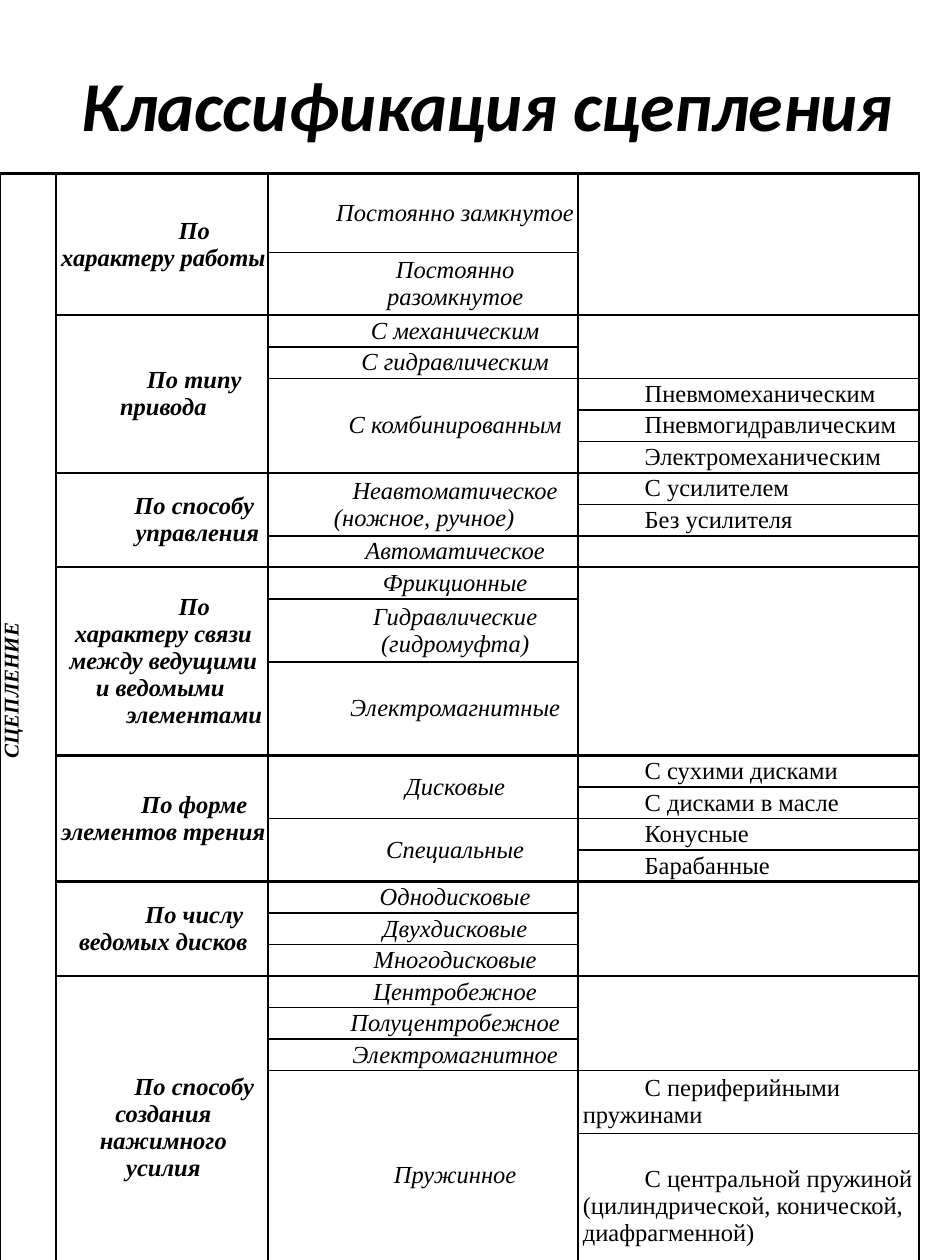
from lxml import etree
from pptx import Presentation
from pptx.dml.color import RGBColor
from pptx.enum import text
from pptx.oxml.ns import qn
from pptx.util import Pt

BLACK = RGBColor(0, 0, 0)
SERIF = "Times New Roman"
THICK, THIN = 1.5, 1
LINE = 18  # height of a one-line row
COLUMNS = [32.1, 121.2, 177, 194.7]
ROWS = [45, 36] + [LINE] * 9 + [36, 53.5] + [LINE] * 10 + [36, 82]

# Feature, its kinds and their subtypes; each entry is (text, rows spanned).
GROUPS = [
    ("По характеру работы",
     [("Постоянно замкнутое", 1), ("Постоянно\nразомкнутое", 1)],
     [("", 2)]),
    ("По типу привода",
     [("С механическим", 1), ("С гидравлическим", 1), ("С комбинированным", 3)],
     [("", 2), ("Пневмомеханическим", 1), ("Пневмогидравлическим", 1),
      ("Электромеханическим", 1)]),
    ("По способу\n управления",
     [("Неавтоматическое (ножное, ручное)", 2), ("Автоматическое", 1)],
     [("С усилителем", 1), ("Без усилителя", 1), ("", 1)]),
    ("По характеру связи между ведущими и ведомыми \nэлементами",
     [("Фрикционные", 1), ("Гидравлические\n(гидромуфта)", 1),
      ("Электромагнитные", 1)],
     [("", 3)]),
    ("По форме элементов трения",
     [("Дисковые", 2), ("Специальные", 2)],
     [("С сухими дисками", 1), ("С дисками в масле", 1),
      ("Конусные", 1), ("Барабанные", 1)]),
    ("По числу ведомых дисков",
     [("Однодисковые", 1), ("Двухдисковые", 1), ("Многодисковые", 1)],
     [("", 3)]),
    ("По способу создания нажимного усилия",
     [("Центробежное", 1), ("Полуцентробежное", 1), ("Электромагнитное", 1),
      ("Пружинное", 2)],
     [("", 3), ("С периферийными пружинами", 1),
      ("С центральной пружиной (цилиндрической, конической, диафрагменной)", 1)]),
]


def style_font(font, name, size, bold, italic):
    font.name, font.size = name, Pt(size)
    font.bold, font.italic = bold, italic
    font.color.rgb = BLACK


def add_title(slide, title):
    sp = slide.shapes.add_textbox(Pt(26), Pt(25), Pt(514), Pt(68))
    tf = sp.text_frame
    tf.word_wrap = True
    tf.vertical_anchor = text.MSO_ANCHOR.MIDDLE
    p = tf.paragraphs[0]
    p.text = title
    p.alignment = text.PP_ALIGN.CENTER
    style_font(p.font, "Calibri", 40, True, True)


def add_border(cell, side, width):
    ln = etree.SubElement(cell._tc.get_or_add_tcPr(), qn(f"a:ln{side}"), w=str(Pt(width)))
    fill = etree.SubElement(ln, qn("a:solidFill"))
    etree.SubElement(fill, qn("a:srgbClr"), val=str(BLACK))


def write_cell(cell, words, size=14, bold=False, italic=True, centred=True, left=1.4):
    """Fill a cell with one indented paragraph per line of words."""
    cell.vertical_anchor = text.MSO_ANCHOR.MIDDLE
    cell.text = words
    for p in cell.text_frame.paragraphs:
        style_font(p.font, SERIF, size, bold, italic)
        if centred:
            p.alignment = text.PP_ALIGN.CENTER
        pPr = p._p.get_or_add_pPr()
        pPr.set("marL", str(Pt(left)))
        pPr.set("indent", str(Pt(35.3)))


def span_cell(table, row, col, span, top=THICK, bottom=THICK):
    """Merge span rows, draw the borders and return the first cell."""
    last = row + span - 1
    for i in range(row, last + 1):
        cell = table.cell(i, col)
        cell.margin_left = cell.margin_right = Pt(1.4)
        cell.margin_top = cell.margin_bottom = 0
        for side, width in zip("LRTB", (THICK, THICK, top, bottom)):
            add_border(cell, side, width)
        cell.fill.background()
    first = table.cell(row, col)
    if span > 1:
        first.merge(table.cell(last, col))
    return first


def fill_column(table, start, end, col, entries, **style):
    row = start
    for words, span in entries:
        top = THICK if row == start else THIN
        bottom = THICK if row + span == end else THIN
        write_cell(span_cell(table, row, col, span, top, bottom), words, **style)
        row += span


def add_classification(slide):
    frame = slide.shapes.add_table(len(ROWS), len(COLUMNS), 0, Pt(99.2),
                                   Pt(sum(COLUMNS)), Pt(sum(ROWS)))
    table = frame.table
    table.first_row = table.horz_banding = False
    for column, width in zip(table.columns, COLUMNS):
        column.width = Pt(width)
    for row, height in zip(table.rows, ROWS):
        row.height = Pt(height)

    root = span_cell(table, 0, 0, len(ROWS))
    write_cell(root, "СЦЕПЛЕНИЕ", size=12, bold=True, left=5.7)
    root._tc.get_or_add_tcPr().set("vert", "vert270")

    start = 0
    for feature, kinds, subtypes in GROUPS:
        end = start + sum(span for _, span in kinds)
        fill_column(table, start, end, 1, [(feature, end - start)], bold=True)
        fill_column(table, start, end, 2, kinds)
        fill_column(table, start, end, 3, subtypes, italic=False, centred=False)
        start = end


def main():
    prs = Presentation()
    prs.slide_width, prs.slide_height = Pt(540), Pt(720)
    slide = prs.slides.add_slide(prs.slide_layouts[6])
    add_title(slide, "Классификация сцепления ")
    add_classification(slide)
    prs.save("out.pptx")


if __name__ == "__main__":
    main()
